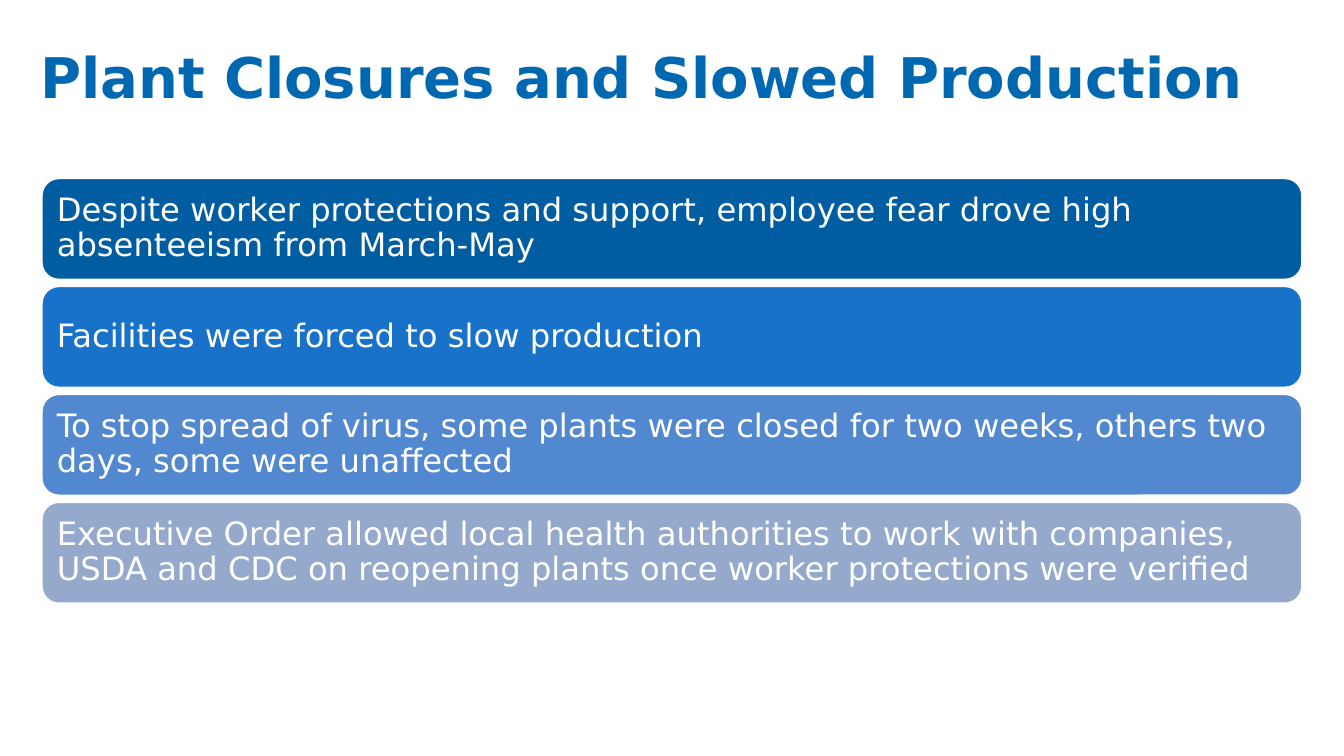
from dataclasses import dataclass

from pptx import Presentation
from pptx.dml.color import RGBColor
from pptx.enum.shapes import MSO_SHAPE as SHAPE
from pptx.enum.text import MSO_ANCHOR as ANCHOR, PP_ALIGN as ALIGN
from pptx.util import Cm, Pt


@dataclass(frozen=True)
class Theme:
    font: str = "DejaVu Sans"
    title: str = "0067B1"
    white: str = "FFFFFF"
    bars: tuple = ("005DA1", "1872C9", "5288D0", "95A9CD")
    title_size: int = 40
    bar_size: int = 23


theme = Theme()


def write(sp, text, size, color, bold, frame):
    tf = sp.text_frame
    for name, value in frame.items():
        setattr(tf, name, value)
    p = tf.paragraphs[0]
    p.alignment = ALIGN.LEFT
    p.line_spacing = 0.9
    r = p.add_run()
    r.text = text
    for name, value in {"name": theme.font, "size": Pt(size), "bold": bold}.items():
        setattr(r.font, name, value)
    r.font.color.rgb = RGBColor.from_string(color)


prs = Presentation()
prs.slide_width, prs.slide_height = Cm(33.87), Cm(19.05)
s = prs.slides.add_slide(prs.slide_layouts[6])

title = s.shapes.add_textbox(Cm(0.84), Cm(1.07), Cm(31.95), Cm(2.11))
title_frame = {
    "word_wrap": True, "vertical_anchor": ANCHOR.TOP,
    "margin_left": Cm(0.18), "margin_right": Cm(0.18),
    "margin_top": Cm(0.2), "margin_bottom": Cm(0.1),
}
write(title, "Plant Closures and Slowed Production",
      theme.title_size, theme.title, True, title_frame)

messages = [
    "Despite worker protections and support, employee fear drove high absenteeism from March-May",
    "Facilities were forced to slow production",
    "To stop spread of virus, some plants were closed for two weeks, others two days, some were unaffected",
    "Executive Order allowed local health authorities to work with companies, "
    "USDA and CDC on reopening plants once worker protections were verified",
]
bar_frame = {"word_wrap": True, "vertical_anchor": ANCHOR.MIDDLE}
bar_frame.update({f"margin_{side}": Cm(0.25) for side in ("left", "top", "right", "bottom")})
bar_top, bar_step = 4.5, 2.72

for i, (message, fill) in enumerate(zip(messages, theme.bars)):
    sp = s.shapes.add_shape(SHAPE.ROUNDED_RECTANGLE, Cm(1.06), Cm(bar_top + i * bar_step),
                            Cm(31.75), Cm(2.54))
    sp.shadow.inherit = False
    sp.fill.solid()
    sp.fill.fore_color.rgb = RGBColor.from_string(fill)
    sp.line.color.rgb = RGBColor.from_string(theme.white)
    sp.line.width = Pt(1)
    write(sp, message, theme.bar_size, theme.white, False, bar_frame)

prs.save("out.pptx")
